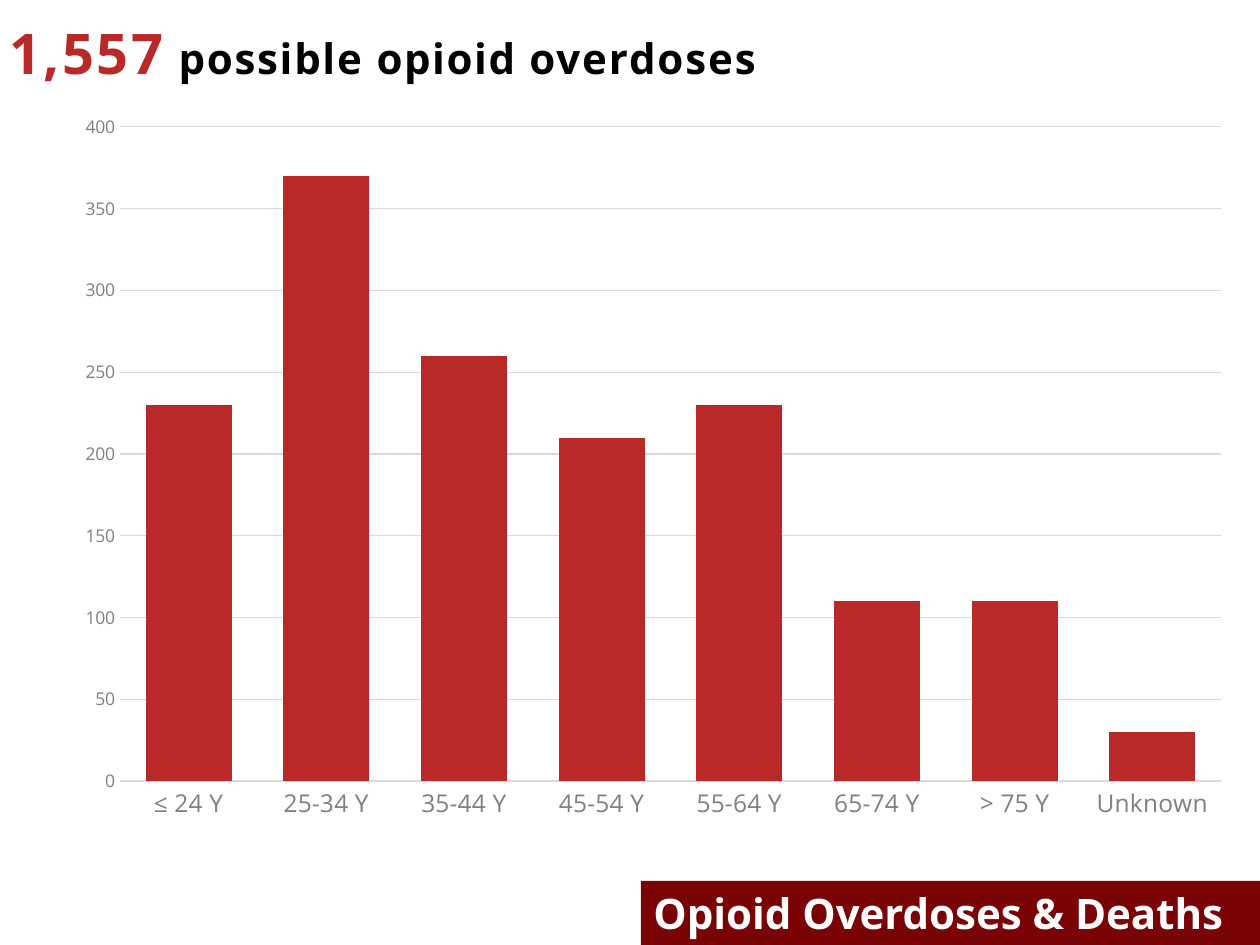
"""Build the slide on possible opioid overdoses by age group."""
from lxml import etree
from pptx import Presentation
from pptx import util as u
from pptx.chart.data import CategoryChartData
from pptx.dml.color import RGBColor
from pptx.enum import chart as ch
from pptx.enum import shapes, text
from pptx.oxml import parse_xml
from pptx.oxml.ns import nsdecls

RED = RGBColor(0xB8, 0x29, 0x27)
MAROON = RGBColor(0x7A, 0x03, 0x06)
BLACK = RGBColor(0, 0, 0)
WHITE = RGBColor(0xFF, 0xFF, 0xFF)
GRAY = RGBColor(0x80, 0x80, 0x80)
GRID = RGBColor(0xD9, 0xD9, 0xD9)
FONT = "Open Sans"

HEADLINE = [
    ("1,557", 32, RED, 140),
    (" possible ", 24, BLACK, 100),
    ("opioid ", 24, BLACK, 90),
    ("overdoses", 24, BLACK, 110),
]
BANNER = "Opioid Overdoses & Deaths"
OVERDOSES = {
    "≤ 24 Y": 230, "25-34 Y": 370, "35-44 Y": 260, "45-54 Y": 210,
    "55-64 Y": 230, "65-74 Y": 110, "> 75 Y": 110, "Unknown": 30,
}
PLOT = {"x": 0.09, "y": 0.016, "w": 0.894, "h": 0.903}
WIDTH, HEIGHT = 1260, 945
HEADLINE_BOX = (7, 18, 1253, 68)
CHART_BOX = (9, 115, 1232, 725)
BANNER_BOX = (641, 881, 619, 64)


def px(*lengths):
    return [u.Emu(round(n * 914400 / 126)) for n in lengths]


def style(font, size, color, bold=False):
    font.name, font.size, font.bold = FONT, u.Pt(size), bold
    font.color.rgb = color


def add_headline(s):
    sp = s.shapes.title
    sp.left, sp.top, sp.width, sp.height = px(*HEADLINE_BOX)
    tf = sp.text_frame
    tf.margin_left = tf.margin_top = tf.margin_right = tf.margin_bottom = 0
    tf.vertical_anchor = text.MSO_ANCHOR.TOP
    tf.auto_size = text.MSO_AUTO_SIZE.NONE
    p = tf.paragraphs[0]
    p.alignment = text.PP_ALIGN.LEFT
    p._p.get_or_add_pPr().set("marL", str(u.Inches(0.02)))
    for words, size, color, spacing in HEADLINE:
        r = p.add_run()
        r.text = words
        style(r.font, size, color, True)
        r._r.get_or_add_rPr().set("spc", str(spacing))


def add_age_chart(s):
    data = CategoryChartData()
    data.categories = list(OVERDOSES)
    data.add_series("Series 1", list(OVERDOSES.values()))
    chart = s.shapes.add_chart(
        ch.XL_CHART_TYPE.COLUMN_CLUSTERED, *px(*CHART_BOX), data).chart
    chart.has_legend = chart.has_title = False
    style(chart.font, 10, GRAY)

    plot = chart.plots[0]
    plot.gap_width, plot.vary_by_categories = 60, False
    fill = plot.series[0].format.fill
    fill.solid()
    fill.fore_color.rgb = RED

    for axis, size in ((chart.category_axis, 14), (chart.value_axis, 10)):
        axis.major_tick_mark = axis.minor_tick_mark = ch.XL_TICK_MARK.NONE
        axis.format.line.fill.background()
        style(axis.tick_labels.font, size, GRAY)
    axis = chart.value_axis
    axis.minimum_scale, axis.maximum_scale, axis.major_unit = 0, 400, 50
    axis.has_major_gridlines = True
    line = axis.major_gridlines.format.line
    line.color.rgb, line.width = GRID, u.Pt(0.75)

    area = chart._chartSpace.chart.plotArea
    for old in area.xpath("c:layout"):
        area.remove(old)
    layout = parse_xml(f"<c:layout {nsdecls('c')}><c:manualLayout/></c:layout>")
    settings = [("layoutTarget", "inner"), ("xMode", "edge"), ("yMode", "edge")]
    for name, value in settings + list(PLOT.items()):
        tag = "{%s}%s" % (layout.nsmap["c"], name)
        etree.SubElement(layout[0], tag).set("val", str(value))
    area.insert(0, layout)


def add_banner(s):
    sp = s.shapes.add_shape(shapes.MSO_SHAPE.RECTANGLE, *px(*BANNER_BOX))
    sp.shadow.inherit = False
    sp.fill.solid()
    sp.fill.fore_color.rgb = MAROON
    sp.line.fill.background()
    tf = sp.text_frame
    tf.word_wrap = True
    tf.vertical_anchor = text.MSO_ANCHOR.TOP
    p = tf.paragraphs[0]
    p.text, p.alignment = BANNER, text.PP_ALIGN.LEFT
    style(p.font, 24, WHITE, True)


def main():
    prs = Presentation()
    prs.slide_width, prs.slide_height = px(WIDTH, HEIGHT)
    s = prs.slides.add_slide(prs.slide_layouts[5])
    add_banner(s)
    add_headline(s)
    add_age_chart(s)
    prs.save("out.pptx")


if __name__ == "__main__":
    main()
